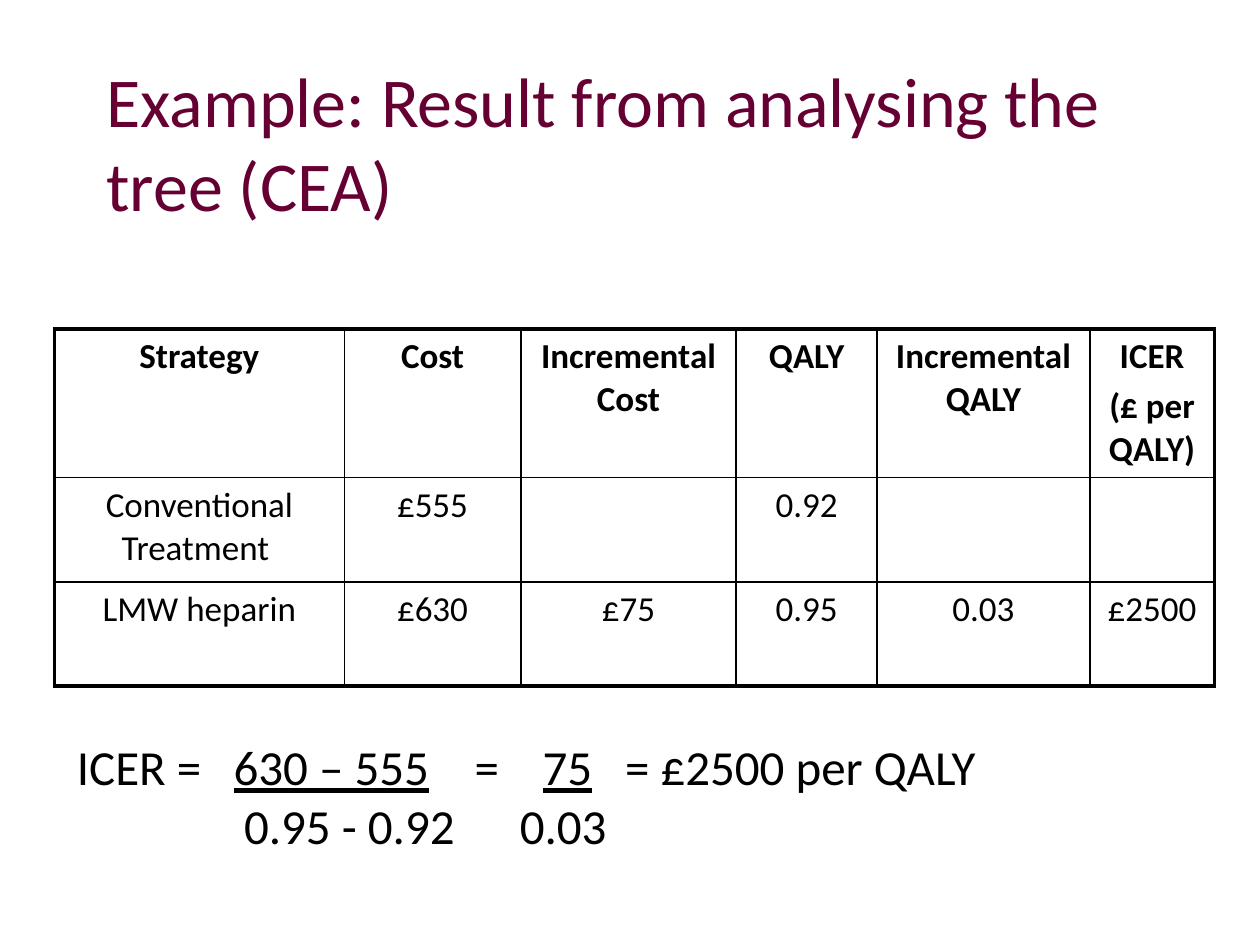
from dataclasses import dataclass

from lxml.etree import SubElement
from pptx import Presentation
from pptx.dml.color import RGBColor
from pptx.enum.text import MSO_ANCHOR, MSO_AUTO_SIZE, PP_ALIGN
from pptx.oxml import parse_xml
from pptx.oxml.ns import nsdecls, qn
from pptx.util import Cm, Pt


@dataclass(frozen=True)
class Theme:
    face: str = "Calibri"
    heading: RGBColor = RGBColor(0x66, 0x00, 0x33)
    ink: RGBColor = RGBColor(0, 0, 0)
    title_size: Pt = Pt(40)
    formula_size: Pt = Pt(28)
    table_size: Pt = Pt(20)
    outer_line: Pt = Pt(2.25)
    inner_line: Pt = Pt(1)


theme = Theme()


def add_run(paragraph, text, color=theme.ink, **font_format):
    run = paragraph.add_run()
    run.text = text
    run.font.color.rgb = color
    for attribute, value in {"name": theme.face, **font_format}.items():
        setattr(run.font, attribute, value)


deck = Presentation()
deck.slide_width, deck.slide_height = Cm(25.4), Cm(19.05)
slide = deck.slides.add_slide(deck.slide_layouts[6])

# Title
title = slide.shapes.add_textbox(Cm(1.9), Cm(1.27), Cm(21.6), Cm(3.18)).text_frame
for attribute, value in {"word_wrap": True, "vertical_anchor": MSO_ANCHOR.MIDDLE}.items():
    setattr(title, attribute, value)
add_run(title.paragraphs[0], "Example: Result from analysing the tree (CEA)",
        theme.heading, size=theme.title_size)

# Results by strategy; a line break starts a new paragraph
results = [
    ["Strategy", "Cost", "Incremental Cost", "QALY", "Incremental QALY", "ICER\n(£ per QALY)"],
    ["Conventional Treatment ", "£555", "", "0.92", "", ""],
    ["LMW heparin", "£630", "£75", "0.95", "0.03", "£2500"],
]
column_widths = [5.84, 3.56, 4.34, 2.84, 4.29, 2.51]
row_heights = [3, 2.1, 2.1]
last_row, last_column = len(row_heights) - 1, len(column_widths) - 1

table = slide.shapes.add_table(
    len(row_heights), len(column_widths), Cm(1.1), Cm(6.63),
    Cm(sum(column_widths)), Cm(sum(row_heights))).table
table.first_row = table.horz_banding = False
for column, width in zip(table.columns, column_widths):
    column.width = Cm(width)
for row, height in zip(table.rows, row_heights):
    row.height = Cm(height)

for r, strategy in enumerate(results):
    for c, entry in enumerate(strategy):
        cell = table.cell(r, c)
        cell.fill.background()
        on_outer_edge = {"lnL": c == 0, "lnR": c == last_column,
                         "lnT": r == 0, "lnB": r == last_row}
        for position, (side, is_outer) in enumerate(on_outer_edge.items()):
            line_width = theme.outer_line if is_outer else theme.inner_line
            cell.fill  # fill stays after the borders in the cell properties
            cell._tc.get_or_add_tcPr().insert(position, parse_xml(
                f'<a:{side} {nsdecls("a")} w="{int(line_width)}"><a:solidFill>'
                f'<a:srgbClr val="{theme.ink}"/></a:solidFill></a:{side}>'))
        for n, line in enumerate(entry.split("\n")):
            paragraph = cell.text_frame.add_paragraph() if n else cell.text_frame.paragraphs[0]
            paragraph.alignment = PP_ALIGN.CENTER
            if n:
                paragraph.space_before = Pt(4)
            if line:
                add_run(paragraph, line, size=theme.table_size, bold=r == 0)

# ICER worked out as fractions: underlined numerators over denominators
formula = slide.shapes.add_textbox(Cm(1.3), Cm(14.73), Cm(21.6), Cm(2.62)).text_frame
for attribute, value in {"word_wrap": True, "auto_size": MSO_AUTO_SIZE.SHAPE_TO_FIT_TEXT}.items():
    setattr(formula, attribute, value)
numerators = [("ICER =\t", False), ("630 – 555\t", True), ("\t=\t", False),
              ("\t75\t", True), (" = £2500 per QALY", False)]
denominators = [("\t0.95 - 0.92\t0.03", False)]
formula_lines = [
    (formula.paragraphs[0], [3.16, 7.56, 8.02, 8.93, 9.39, 10.83], numerators),
    (formula.add_paragraph(), [3.37, 8.93], denominators),
]
for paragraph, tab_stops, parts in formula_lines:
    tab_list = SubElement(paragraph._p.get_or_add_pPr(), qn("a:tabLst"))
    for stop in tab_stops:
        SubElement(tab_list, qn("a:tab"), pos=str(int(Cm(stop))), algn="l")
    for text, underlined in parts:
        add_run(paragraph, text, size=theme.formula_size, underline=underlined)

deck.save("out.pptx")
